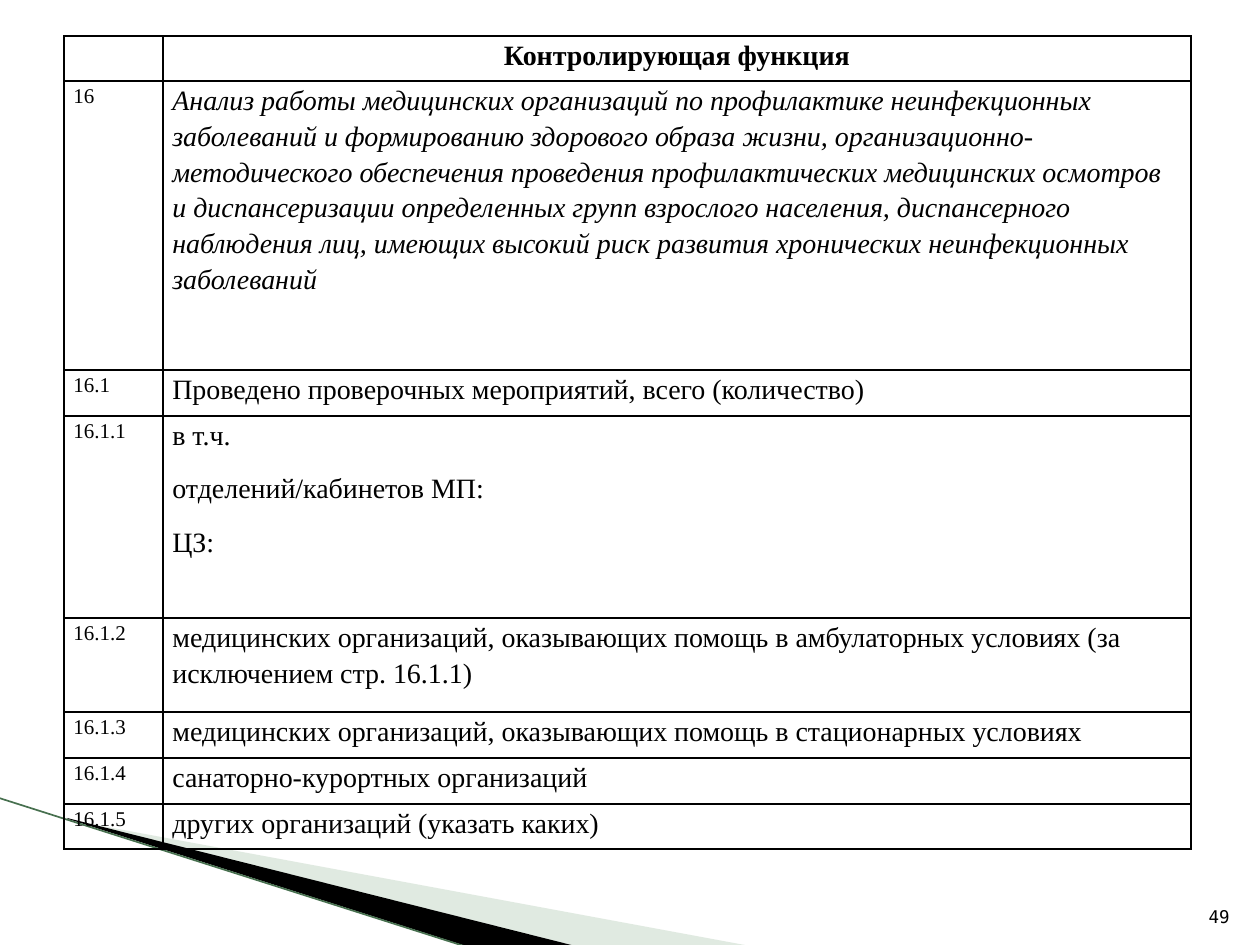
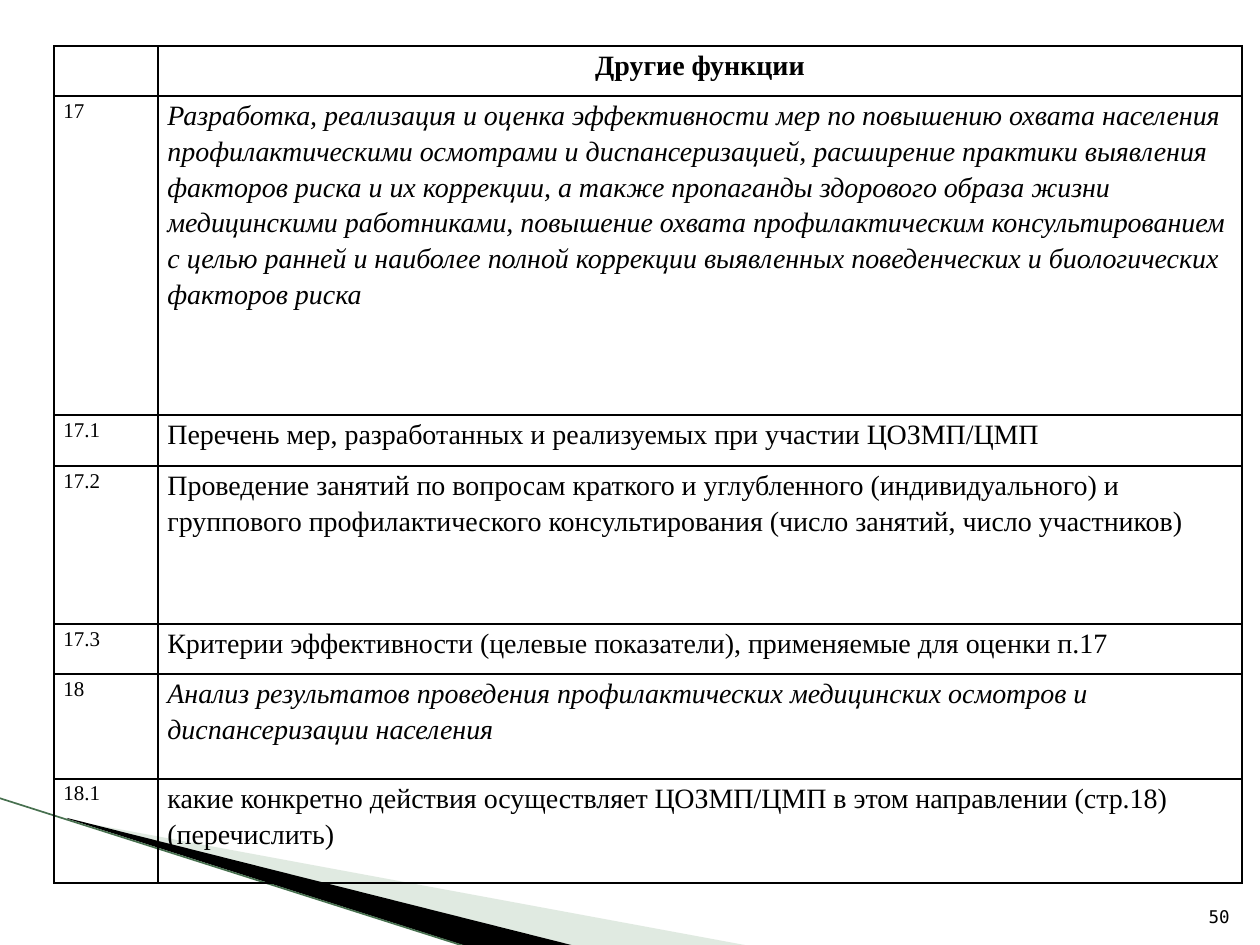
from lxml.etree import SubElement
from pptx import Presentation
from pptx.dml.color import RGBColor
from pptx.enum.shapes import MSO_CONNECTOR
from pptx.enum.text import MSO_ANCHOR, PP_ALIGN
from pptx.oxml.ns import qn
from pptx.util import Pt

EMU_PER_PX = 914400 / 126
COLORS = {"text": "000000", "border": "000000", "pale": "B3CBB5",
          "dark": "000000", "edge": "47704F"}
TABLE_FONT = "Times New Roman"
NUMBER_FONT = "DejaVu Sans Mono"
CELL_MARGIN = Pt(5.4)
NORMAL, ITALIC = False, True

# Each row: height, number, paragraphs, italic
CONTROL_ROWS = [
    (289, "16", [
        "Анализ работы медицинских организаций по профилактике неинфекционных "
        "заболеваний и формированию здорового образа жизни, "
        "организационно-методического обеспечения проведения профилактических "
        "медицинских осмотров и диспансеризации определенных групп взрослого "
        "населения, диспансерного наблюдения лиц, имеющих высокий риск развития "
        "хронических неинфекционных заболеваний"], ITALIC),
    (46, "16.1", ["Проведено проверочных мероприятий, всего (количество)"], NORMAL),
    (202, "16.1.1", ["в т.ч.", "отделений/кабинетов МП:", "ЦЗ:"], NORMAL),
    (94, "16.1.2", [
        "медицинских организаций, оказывающих помощь в амбулаторных условиях "
        "(за исключением стр. 16.1.1)"], NORMAL),
    (46, "16.1.3", [
        "медицинских организаций, оказывающих помощь в стационарных условиях"], NORMAL),
    (46, "16.1.4", ["санаторно-курортных организаций"], NORMAL),
    (45, "16.1.5", ["других организаций (указать каких)"], NORMAL),
]
OTHER_ROWS = [
    (319, "17", [
        "Разработка, реализация и оценка эффективности мер по повышению охвата "
        "населения профилактическими осмотрами и диспансеризацией, расширение "
        "практики выявления факторов риска и их коррекции, а также пропаганды "
        "здорового образа жизни медицинскими работниками, повышение охвата "
        "профилактическим консультированием с целью ранней и наиболее полной "
        "коррекции выявленных поведенческих и биологических факторов риска"], ITALIC),
    (51, "17.1", [
        "Перечень мер, разработанных и реализуемых при участии ЦОЗМП/ЦМП"], NORMAL),
    (158, "17.2", [
        "Проведение занятий по вопросам краткого и углубленного (индивидуального) "
        "и группового профилактического консультирования (число занятий, число "
        "участников)"], NORMAL),
    (50, "17.3", [
        "Критерии эффективности (целевые показатели), применяемые для оценки п.17"],
     NORMAL),
    (105, "18", [
        "Анализ результатов проведения профилактических медицинских осмотров и "
        "диспансеризации населения"], ITALIC),
    (104, "18.1", [
        "какие конкретно действия осуществляет ЦОЗМП/ЦМП в этом направлении "
        "(стр.18) (перечислить)"], NORMAL),
]


def px(length):
    return round(length * EMU_PER_PX)


def color(name):
    return RGBColor.from_string(COLORS[name])


def set_frame(shape, points, left, top, width, height):
    """Give a freeform a frame of its own, leaving its outline in place."""
    shift_x = min(x for x, _ in points) - left
    shift_y = min(y for _, y in points) - top
    outline = shape._element.find(".//" + qn("a:path"))
    outline.set("w", str(width))
    outline.set("h", str(height))
    for point in outline.iter(qn("a:pt")):
        point.set("x", str(int(point.get("x")) + shift_x))
        point.set("y", str(int(point.get("y")) + shift_y))
    shape.left, shape.top = px(left), px(top)
    shape.width, shape.height = px(width), px(height)


def add_wedge(page, points, frame, fill, opacity=100):
    builder = page.shapes.build_freeform(*points[0], scale=EMU_PER_PX)
    builder.add_line_segments(points[1:])
    wedge = builder.convert_to_shape()
    set_frame(wedge, points, *frame)
    wedge.shadow.inherit = False
    wedge.fill.solid()
    wedge.fill.fore_color.rgb = color(fill)
    wedge.line.fill.background()
    if opacity < 100:
        tint = wedge.fill._xPr.find(".//" + qn("a:srgbClr"))
        SubElement(tint, qn("a:alpha"), val=str(opacity * 1000))


def add_corner_decoration(page):
    add_wedge(page, [(69, 820), (750, 946), (575, 946), (69, 819)],
              (98, 689, 524, 199), "pale", 40)
    add_wedge(page, [(67, 818), (575, 946), (469, 947), (68, 819)],
              (-8, 798, 524, 116), "dark")
    edge = page.shapes.add_connector(
        MSO_CONNECTOR.STRAIGHT, px(-1), px(798), px(467), px(947))
    edge.line.color.rgb = color("edge")
    edge.line.width = Pt(0.95)
    SubElement(edge._element.spPr, qn("a:effectLst"))


def style_font(paragraph, name, size, bold=False, italic=False):
    font = paragraph.font
    font.name, font.size = name, Pt(size)
    font.bold, font.italic = bold, italic
    font.color.rgb = color("text")


def add_page_number(page, number):
    box = page.shapes.add_textbox(px(1192), px(883), px(50), px(50))
    frame = box.text_frame
    frame.word_wrap = True
    frame.vertical_anchor = MSO_ANCHOR.BOTTOM
    para = frame.paragraphs[0]
    para.text = str(number)
    para.alignment = PP_ALIGN.RIGHT
    style_font(para, NUMBER_FONT, 10)


def prepare_cell(cell):
    """Clear the cell's fill, set its margins and draw its four borders."""
    cell.margin_left = cell.margin_right = CELL_MARGIN
    cell.margin_top = cell.margin_bottom = 0
    properties = cell._tc.get_or_add_tcPr()
    for side in ("lnL", "lnR", "lnT", "lnB"):
        border = SubElement(properties, qn(f"a:{side}"), w=str(Pt(1)))
        solid = SubElement(border, qn("a:solidFill"))
        SubElement(solid, qn("a:srgbClr"), val=COLORS["border"])
    cell.fill.background()


def write_cell(cell, texts, size, alignment=PP_ALIGN.LEFT, **emphasis):
    frame = cell.text_frame
    for index, text in enumerate(texts):
        para = frame.add_paragraph() if index else frame.paragraphs[0]
        para.text = text
        para.alignment = alignment
        para.line_spacing = 1.15
        para.space_after = Pt(10)
        style_font(para, TABLE_FONT, size, **emphasis)


def add_function_table(page, left, top, widths, heading, heading_height, rows):
    heights = [heading_height] + [row[0] for row in rows]
    table = page.shapes.add_table(
        len(heights), len(widths), px(left), px(top),
        px(sum(widths)), px(sum(heights))).table
    table.first_row = table.horz_banding = False
    for column, width in zip(table.columns, widths):
        column.width = px(width)
    for row, height in zip(table.rows, heights):
        row.height = px(height)
    for cell in table.iter_cells():
        prepare_cell(cell)
    write_cell(table.cell(0, 1), [heading], 16, PP_ALIGN.CENTER, bold=True)
    for index, (_, number, texts, italic) in enumerate(rows, start=1):
        write_cell(table.cell(index, 0), [number], 12)
        write_cell(table.cell(index, 1), texts, 16, italic=italic)


def add_page(deck, number, **table):
    page = deck.slides.add_slide(deck.slide_layouts[6])
    add_corner_decoration(page)
    add_function_table(page, **table)
    add_page_number(page, number)


def main():
    deck = Presentation()
    deck.slide_width, deck.slide_height = px(1260), px(945)
    add_page(deck, 49, left=64, top=36, widths=(99, 1028),
             heading="Контролирующая функция", heading_height=45, rows=CONTROL_ROWS)
    add_page(deck, 50, left=54, top=46, widths=(104, 1084),
             heading="Другие функции", heading_height=50, rows=OTHER_ROWS)
    deck.save("out.pptx")


if __name__ == "__main__":
    main()
